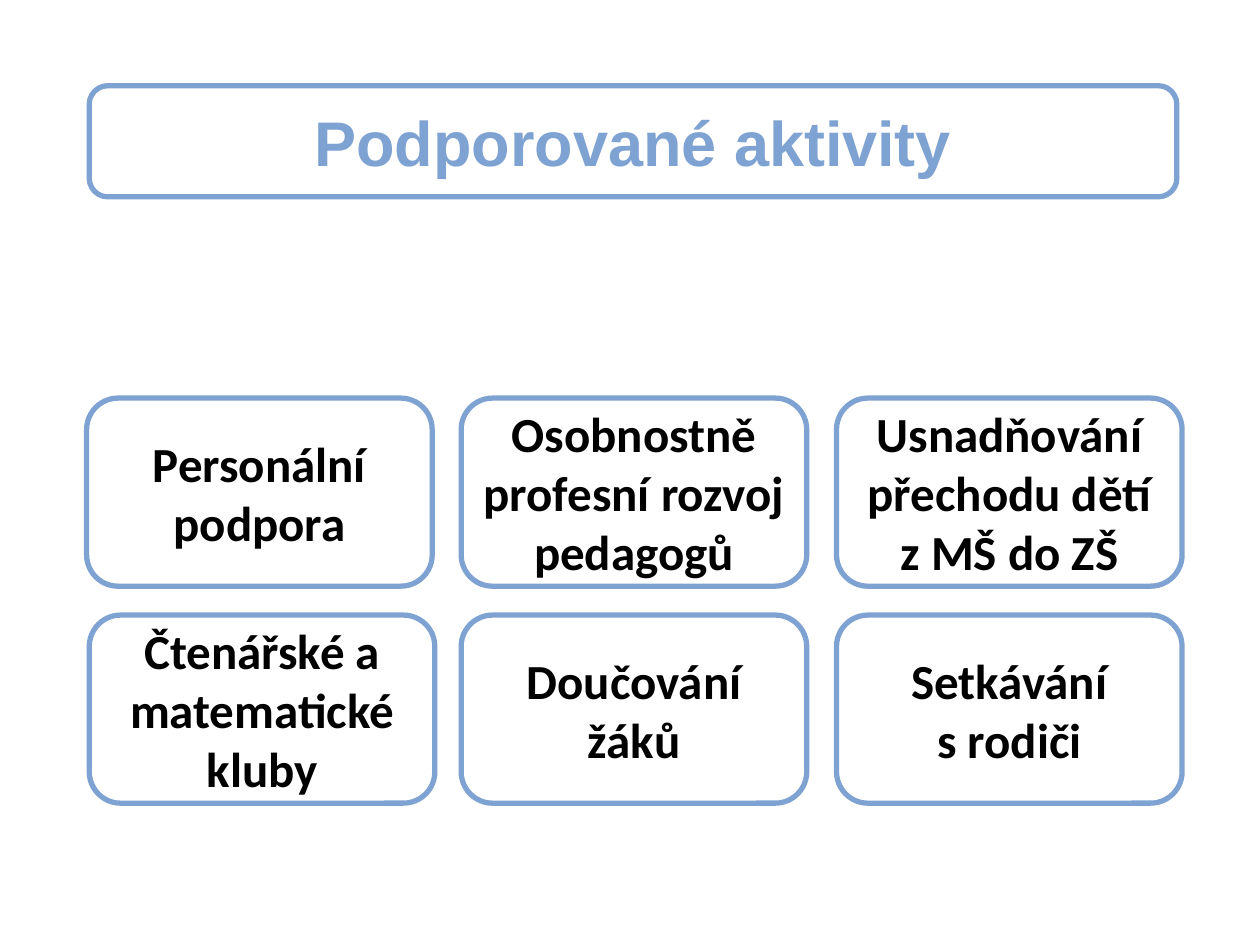
from pptx import Presentation
from pptx.dml.color import RGBColor
from pptx.enum.shapes import MSO_SHAPE as Kind
from pptx.enum.text import MSO_ANCHOR as Anchor, PP_ALIGN as Align
from pptx.util import Pt

BLUE, BLACK, WHITE = "7EA2D1", "000000", "FFFFFF"


def tint(code):
    return RGBColor.from_string(code)


def write(frame, text, font="Calibri", size=28, color=BLACK, bold=True):
    frame.word_wrap = True
    frame.vertical_anchor = Anchor.MIDDLE
    frame.margin_left = frame.margin_right = Pt(5)
    frame.text = text
    for para in frame.paragraphs:
        para.alignment = Align.CENTER
        para.font.name = font
        para.font.size = Pt(size)
        para.font.bold = bold
        para.font.color.rgb = tint(color)


class Deck:
    def __init__(self, wide, high):
        self.show = Presentation()
        self.show.slide_width = Pt(wide)
        self.show.slide_height = Pt(high)
        self.slide = self.show.slides.add_slide(self.show.slide_layouts[6])
        self.edge, self.weight = BLUE, 3

    def box(self, left, top, wide, high, text, fill=None, **style):
        shape = self.slide.shapes.add_shape(
            Kind.ROUNDED_RECTANGLE, Pt(left), Pt(top), Pt(wide), Pt(high))
        shape.shadow.inherit = False
        if fill:
            shape.fill.solid()
            shape.fill.fore_color.rgb = tint(fill)
        else:
            shape.fill.background()
        shape.line.color.rgb = tint(self.edge)
        shape.line.width = Pt(self.weight)
        write(shape.text_frame, text, **style)


def main():
    deck = Deck(720, 540)
    deck.box(51, 49, 621.5, 63.5, "Podporované aktivity", fill=WHITE,
             font="Arial", size=36, color=BLUE)
    rows = [
        (49.5, ["Personální podpora", "Osobnostně profesní rozvoj pedagogů",
                "Usnadňování přechodu dětí z MŠ do ZŠ"]),
        (51, ["Čtenářské a\u00a0matematické kluby".replace("\u00a0", " "),
              "Doučování žáků", "Setkávání\ns rodiči"]),
    ]
    for row, (start, texts) in enumerate(rows):
        for col, text in enumerate(texts):
            left = 263.5 + (col - 1) * 214.5 if col else start
            deck.box(left, 227.5 + row * 124, 197.5, 107.5, text)
    deck.show.save("out.pptx")


if __name__ == "__main__":
    main()
